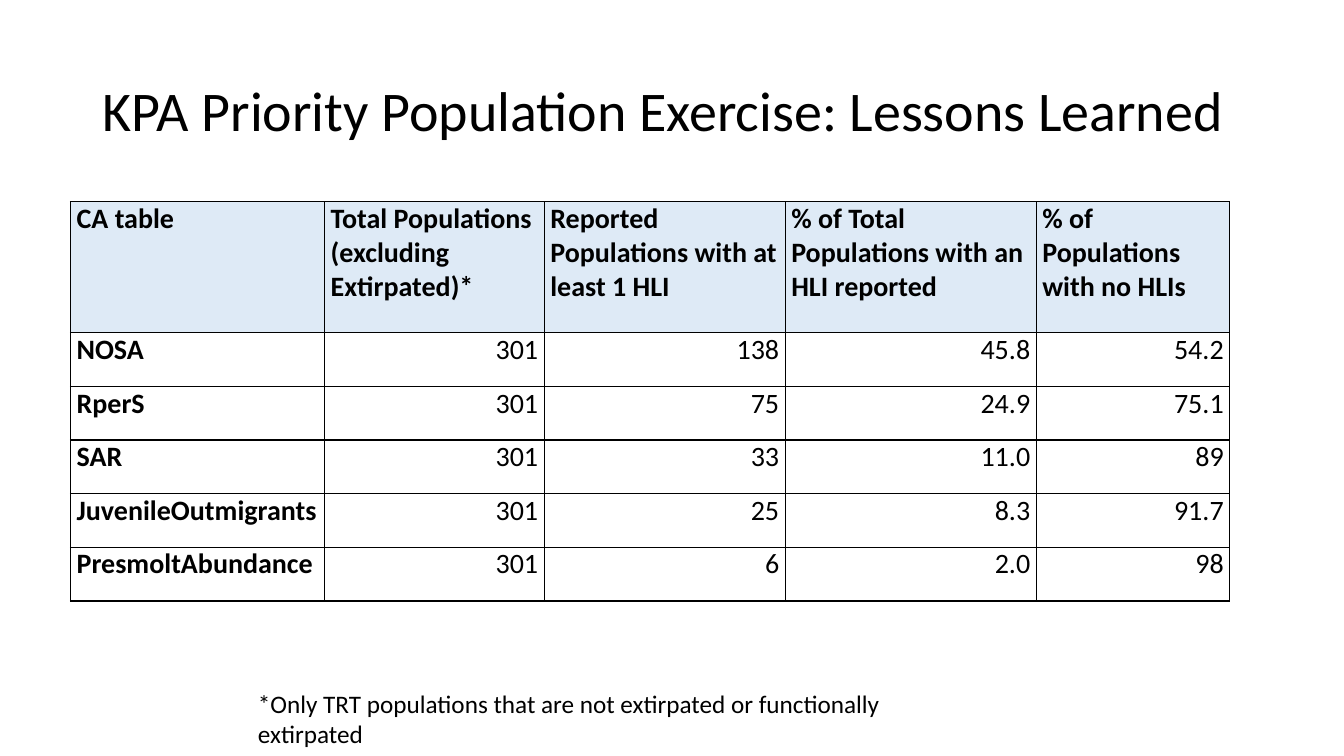
"""Build the priority population slide: a title, a table and a footnote."""
from dataclasses import dataclass

from lxml import etree
from pptx import Presentation
from pptx import util as u
from pptx.dml.color import RGBColor
from pptx.enum import text
from pptx.oxml import ns

BLACK = RGBColor(0x00, 0x00, 0x00)
HEADER_BLUE = RGBColor(0xDE, 0xEA, 0xF6)
FONT = "Calibri"
SLIDE_W, SLIDE_H = u.Inches(13.33), u.Inches(7.5)
COLUMN_SHARES = (18.9, 16.35, 17.93, 18.68, 14.4)
HEADER_SHARE, ROW_SHARE = 17.33, 7.1
HEADERS = (
    "CA table",
    "Total Populations (excluding Extirpated)*",
    "Reported Populations with at least 1 HLI",
    "% of Total Populations with an HLI reported",
    "% of Populations with no HLIs",
)


@dataclass(frozen=True)
class Box:
    """A frame in percent of the slide's width and height."""
    left: float
    top: float
    width: float
    height: float

    def emu(self) -> tuple[int, int, int, int]:
        """Return the frame as left, top, width and height in EMU."""
        return across(self.left), down(self.top), across(self.width), down(self.height)


@dataclass(frozen=True)
class Population:
    """One table row of population counts and shares."""
    name: str
    total: str
    reported: str
    with_hli: str
    without_hli: str

    def texts(self) -> tuple[str, ...]:
        """Return the row's texts in column order."""
        return self.name, self.total, self.reported, self.with_hli, self.without_hli


TITLE_BOX = Box(6.9, 5.33, 86.27, 19.33)
TABLE_BOX = Box(5.25, 26.67, sum(COLUMN_SHARES), HEADER_SHARE + 5 * ROW_SHARE)
NOTE_BOX = Box(18.45, 90.4, 55.9, 5.33)
POPULATIONS = (
    Population("NOSA", "301", "138", "45.8", "54.2"),
    Population("RperS", "301", "75", "24.9", "75.1"),
    Population("SAR", "301", "33", "11.0", "89"),
    Population("JuvenileOutmigrants", "301", "25", "8.3", "91.7"),
    Population("PresmoltAbundance", "301", "6", "2.0", "98"),
)


def across(percent: float) -> int:
    """Convert a percentage of the slide width to EMU."""
    return round(SLIDE_W * percent / 100)


def down(percent: float) -> int:
    """Convert a percentage of the slide height to EMU."""
    return round(SLIDE_H * percent / 100)


def write(tf, words: str, size: int, bold: bool = False, align=text.PP_ALIGN.LEFT):
    """Fill a text frame with one formatted paragraph and return it."""
    p = tf.paragraphs[0]
    p.text = words
    p.alignment = align
    p.font.name, p.font.size, p.font.bold = FONT, u.Pt(size), bold
    p.font.color.rgb = BLACK
    return p


def add_borders(cell) -> None:
    """Draw a thin black line on all four sides of a cell."""
    props = cell._tc.get_or_add_tcPr()
    for i, side in enumerate(("lnL", "lnR", "lnT", "lnB")):
        line = etree.Element(ns.qn(f"a:{side}"), w=str(u.Pt(1)))
        fill = etree.SubElement(line, ns.qn("a:solidFill"))
        etree.SubElement(fill, ns.qn("a:srgbClr"), val=str(BLACK))
        props.insert(i, line)


def add_title(s, words: str) -> None:
    """Place and format the title placeholder."""
    sp = s.shapes.title
    sp.left, sp.top, sp.width, sp.height = TITLE_BOX.emu()
    tf = sp.text_frame
    tf.vertical_anchor = text.MSO_ANCHOR.MIDDLE
    tf.auto_size = text.MSO_AUTO_SIZE.NONE
    write(tf, words, 40).line_spacing = 0.9


def add_population_table(s) -> None:
    """Add the bordered table with a tinted header row."""
    rows = (HEADERS, *(population.texts() for population in POPULATIONS))
    table = s.shapes.add_table(len(rows), len(HEADERS), *TABLE_BOX.emu()).table
    table.first_row = table.horz_banding = False
    for column, share in zip(table.columns, COLUMN_SHARES):
        column.width = across(share)
    for i, texts in enumerate(rows):
        is_header = i == 0
        table.rows[i].height = down(HEADER_SHARE if is_header else ROW_SHARE)
        for j, words in enumerate(texts):
            cell = table.cell(i, j)
            cell.margin_left = cell.margin_right = u.Inches(0.06)
            cell.margin_top = cell.margin_bottom = 0
            is_label = is_header or j == 0
            align = text.PP_ALIGN.LEFT if is_label else text.PP_ALIGN.RIGHT
            write(cell.text_frame, words, 20, is_label, align)
            if is_header:
                cell.fill.solid()
                cell.fill.fore_color.rgb = HEADER_BLUE
            else:
                cell.fill.background()
            add_borders(cell)


def add_note(s, words: str) -> None:
    """Add the footnote on a single line."""
    tf = s.shapes.add_textbox(*NOTE_BOX.emu()).text_frame
    tf.word_wrap = False
    tf.auto_size = text.MSO_AUTO_SIZE.SHAPE_TO_FIT_TEXT
    write(tf, words, 18)


def main() -> None:
    """Build and save the slide."""
    prs = Presentation()
    prs.slide_width, prs.slide_height = SLIDE_W, SLIDE_H
    s = prs.slides.add_slide(prs.slide_layouts.get_by_name("Title Only"))
    add_title(s, "KPA Priority Population Exercise: Lessons Learned")
    add_note(s, "*Only TRT populations that are not extirpated or functionally extirpated")
    add_population_table(s)
    prs.save("out.pptx")


if __name__ == "__main__":
    main()
